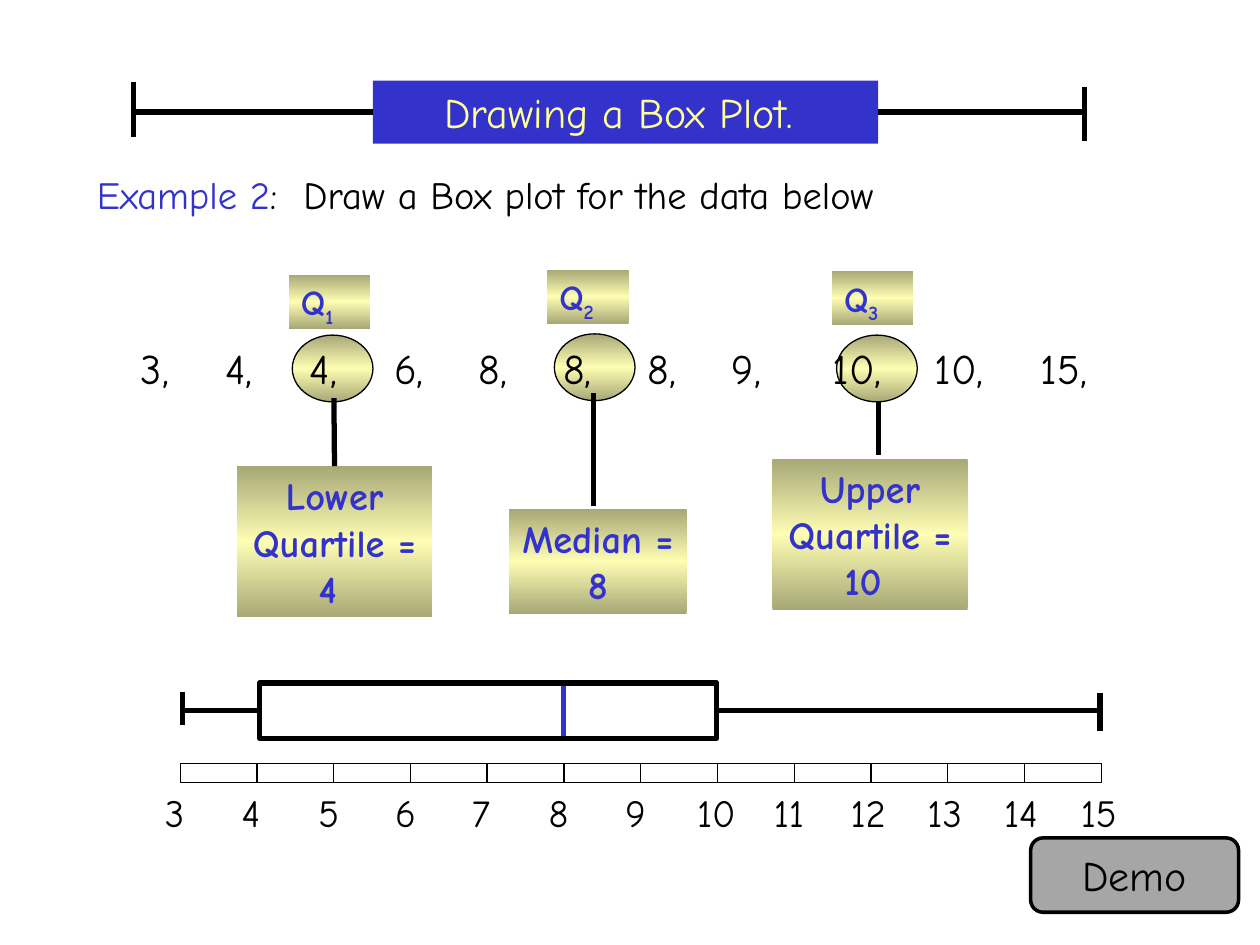
from copy import deepcopy

from pptx import Presentation
from pptx.dml.color import RGBColor
from pptx.enum.shapes import MSO_CONNECTOR, MSO_SHAPE as SHAPE
from pptx.enum.text import MSO_ANCHOR as ANCHOR, PP_ALIGN as ALIGN
from pptx.oxml.ns import qn
from pptx.oxml.xmlchemy import OxmlElement
from pptx.util import Inches, Pt

BLACK, BLUE, YELLOW, GREY = "000000", "3333CC", "FFFF99", "A6A6A6"
GOLD = ("A8A877", "FDFDB3", "A8A877")
LEFT, TOP, RIGHT = 1, 0, 3
color = RGBColor.from_string

prs = Presentation()
prs.slide_width, prs.slide_height = Inches(10), Inches(7.5)
slide = prs.slides.add_slide(prs.slide_layouts[6])


def add_part(kind, at, fill=None, outline=None, runs=(), align=ALIGN.LEFT,
             anchor=ANCHOR.TOP, tabs=()):
    place = [Inches(length) for length in at]
    if kind is None:
        part = slide.shapes.add_textbox(*place)
    else:
        part = slide.shapes.add_shape(kind, *place)
        part.shadow.inherit = False
        if fill == GOLD:
            part.fill.gradient()
            part.fill.gradient_angle = 90
            stops = part._element.spPr.find(".//" + qn("a:gsLst"))
            stops.append(deepcopy(stops[0]))
            for i, stop in enumerate(part.fill.gradient_stops):
                stop.position = i / 2
                stop.color.rgb = color(GOLD[i])
        elif fill:
            part.fill.solid()
            part.fill.fore_color.rgb = color(fill)
        else:
            part.fill.background()
        if outline:
            part.line.color.rgb = color(BLACK)
            part.line.width = Pt(outline)
        else:
            part.line.fill.background()
    frame = part.text_frame
    frame.word_wrap = True
    frame.vertical_anchor = anchor
    paragraph = frame.paragraphs[0]
    paragraph.alignment = align
    if tabs:
        tab_list = OxmlElement("a:tabLst")
        for position in tabs:
            tab = OxmlElement("a:tab")
            tab.set("pos", str(Inches(position)))
            tab.set("algn", "l")
            tab_list.append(tab)
        paragraph._p.get_or_add_pPr().append(tab_list)
    for text, size, hue, bold, baseline in runs:
        run = paragraph.add_run()
        run.text = text
        style = {"name": "Comic Neue", "size": Pt(size), "bold": bold}
        for name, value in style.items():
            setattr(run.font, name, value)
        run.font.color.rgb = color(hue)
        if baseline:
            run._r.get_or_add_rPr().set("baseline", str(baseline))
    return part


def add_line(x1, y1, x2, y2, hue=BLACK):
    line = slide.shapes.add_connector(
        MSO_CONNECTOR.STRAIGHT, *[Inches(v) for v in (x1, y1, x2, y2)])
    line.line.color.rgb = color(hue)
    line.line.width = Pt(3)
    line._element.spPr.append(OxmlElement("a:effectLst"))
    return line


quartiles = [
    ("3", "Upper Quartile = 10 ", (6.64, 2.66), (6.6, 2.15), (6.13, 3.64, 1.55, 1.2), (6.97, 3.18, 3.61)),
    ("1", "Lower Quartile = 4 ", (2.32, 2.66), (2.29, 2.18), (1.88, 3.7, 1.55, 1.2), (2.65, 3.16, 3.7)),
    ("2", "Median = 8", (4.4, 2.65), (4.34, 2.14), (4.04, 4.04, 1.41, 0.83), (4.71, 3.12, 4.02)),
]
for number, result, ring_at, tag_at, result_at, (x, top, bottom) in quartiles:
    add_part(SHAPE.OVAL, (*ring_at, 0.64, 0.53), GOLD, 0.75)
    result_box = add_part(SHAPE.RECTANGLE, result_at, GOLD,
                          runs=[(result, 22, BLUE, True, 0)], align=ALIGN.CENTER)
    stem = add_line(x, top, x, bottom)
    if number == "1":
        stem.end_connect(result_box, TOP)
    add_part(SHAPE.RECTANGLE, (*tag_at, 0.65, 0.43), GOLD,
             runs=[("Q", 20, BLUE, True, 0), (number, 20, BLUE, True, -25000)])

data = [3, 4, 4, 6, 8, 8, 8, 9, 10, 10, 15]
data_tabs = [0.67 * i for i in range(1, 8)] + [5.49, 6.3, 7.14]
add_part(None, (1.02, 2.67, 8.12, 0.5), tabs=data_tabs,
         runs=[("\t".join(f"{value}," for value in data), 24, BLACK, False, 0)])
add_part(None, (0.67, 1.31, 9.02, 0.47), tabs=[1.64],
         runs=[("Example 2", 22, BLUE, False, 0),
               (":\tDraw a Box plot for the data below", 22, BLACK, False, 0)])

title = add_part(SHAPE.RECTANGLE, (2.96, 0.64, 4.01, 0.5), BLUE, align=ALIGN.CENTER,
                 runs=[("Drawing a Box Plot. ", 24, YELLOW, False, 0)])
add_line(4.47, 5.84, 4.47, 5.42, BLUE)
box = add_part(SHAPE.RECTANGLE, (2.06, 5.42, 3.63, 0.44), outline=3)

whiskers = [
    (title, RIGHT, 8.61, 0.89, 0.69, 1.12),
    (title, LEFT, 1.06, 0.89, 0.65, 1.09),
    (box, LEFT, 1.45, 5.64, 5.49, 5.75),
    (box, RIGHT, 8.73, 5.64, 5.5, 5.8),
]
for body, side, x, y, cap_top, cap_bottom in whiskers:
    add_line(x, y, x, y).begin_connect(body, side)
    add_line(x, cap_top, x, cap_bottom)

first, last, scale_left = 3, 15, 1.43
step = 7.31 / (last - first)
for value in range(first, last + 1):
    x = scale_left + step * (value - first)
    if value < last:
        add_part(SHAPE.RECTANGLE, (x, 6.06, step, 0.15), outline=0.75)
    shift, width = (0.22, 0.42) if value < 10 else (0.26, 0.67)
    add_part(None, (x - shift, 6.21, width, 0.47),
             runs=[(str(value), 22, BLACK, False, 0)])

add_part(SHAPE.ROUNDED_RECTANGLE, (8.18, 6.65, 1.65, 0.59), GREY, 2,
         [("Demo", 24, BLACK, False, 0)], ALIGN.CENTER, ANCHOR.MIDDLE)

prs.save("out.pptx")
